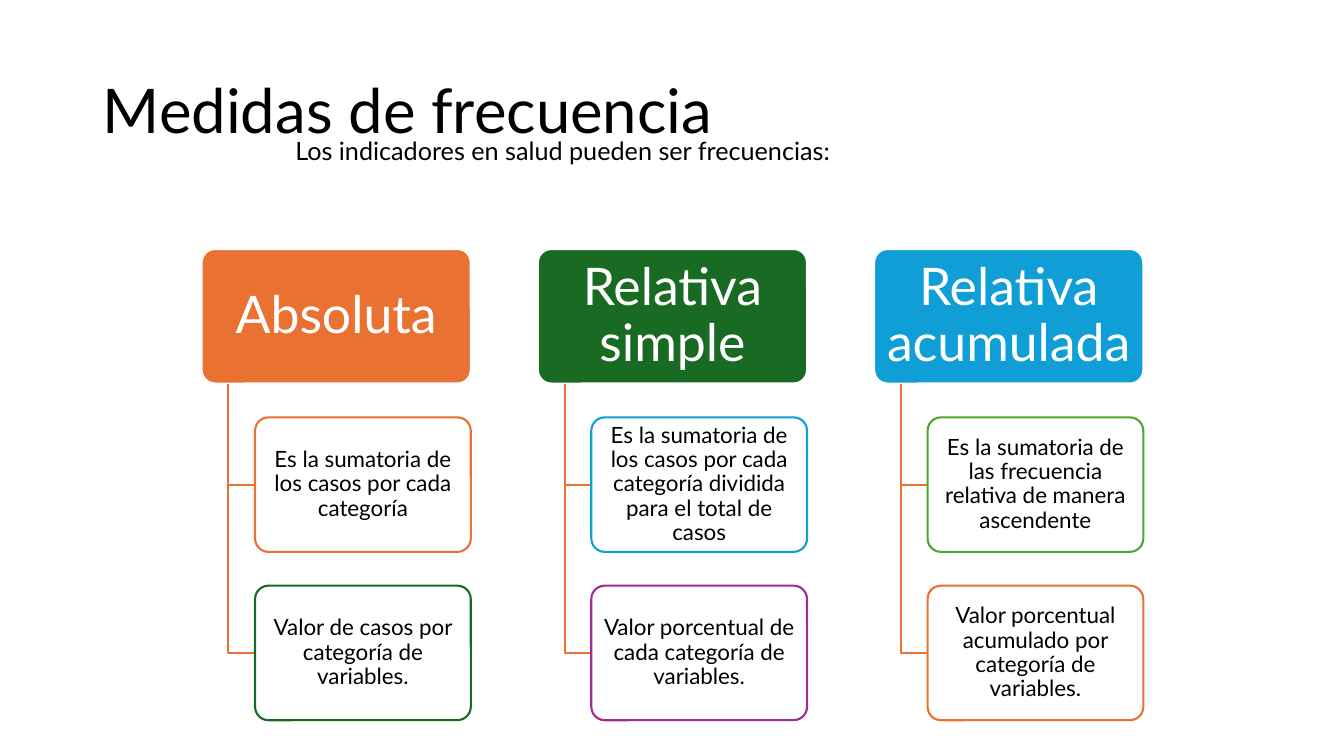
from pptx import Presentation
from pptx.dml.color import RGBColor
from pptx.enum.shapes import MSO_SHAPE
from pptx.enum.text import MSO_ANCHOR, MSO_AUTO_SIZE, PP_ALIGN
from pptx.util import Inches, Pt

FONT = "Lato"
ORANGE, GREEN, BLUE = "E97132", "196B24", "0F9ED5"
PURPLE, LIME, WHITE, BLACK = "A02B93", "4EA72E", "FFFFFF", "000000"

TITLE = "Medidas de frecuencia"
SUBTITLE = "Los indicadores en salud pueden ser frecuencias:"
# Heading, heading colour, then (text, outline colour) for each branch
FREQUENCIES = [
    ("Absoluta", ORANGE, [
        ("Es la sumatoria de los casos por cada categoría", ORANGE),
        ("Valor de casos por categoría de variables.", GREEN),
    ]),
    ("Relativa simple", GREEN, [
        ("Es la sumatoria de los casos por cada categoría dividida para el total de casos", BLUE),
        ("Valor porcentual de cada categoría de variables.", PURPLE),
    ]),
    ("Relativa acumulada", BLUE, [
        ("Es la sumatoria de las frecuencia relativa de manera ascendente", LIME),
        ("Valor porcentual acumulado por categoría de variables.", ORANGE),
    ]),
]

LEFT, TOP = 2, 2.47
COLUMN_STEP, ROW_STEP = 3.335, 1.67
HEADING_WIDTH, BRANCH_WIDTH, BOX_HEIGHT = 2.67, 2.14, 1.335
TRUNK_INDENT, BRANCH_INDENT = 0.265, 0.53


def color(value):
    return RGBColor.from_string(value)


def write(shape, text, size, ink, align=PP_ALIGN.LEFT, spacing=1.0):
    shape.text_frame.text = text
    paragraph = shape.text_frame.paragraphs[0]
    paragraph.alignment = align
    paragraph.line_spacing = spacing
    paragraph.font.name = FONT
    paragraph.font.size = Pt(size)
    paragraph.font.color.rgb = color(ink)


def set_line(shape, ink):
    shape.shadow.inherit = False
    shape.line.color.rgb = color(ink)
    shape.line.width = Pt(1.5)


def add_box(slide, left, top, width, text, size, ink, fill, outline, margins):
    box = slide.shapes.add_shape(
        MSO_SHAPE.ROUNDED_RECTANGLE,
        Inches(left), Inches(top), Inches(width), Inches(BOX_HEIGHT))
    box.adjustments[0] = 0.1
    box.fill.solid()
    box.fill.fore_color.rgb = color(fill)
    set_line(box, outline)
    frame = box.text_frame
    frame.word_wrap = True
    frame.vertical_anchor = MSO_ANCHOR.MIDDLE
    frame.margin_left = frame.margin_right = Inches(margins[0])
    frame.margin_top = frame.margin_bottom = Inches(margins[1])
    write(box, text, size, ink, PP_ALIGN.CENTER, 0.9)


def add_elbow(slide, left, top, right, bottom):
    builder = slide.shapes.build_freeform(Inches(left), Inches(top))
    builder.add_line_segments(
        [(Inches(left), Inches(bottom)), (Inches(right), Inches(bottom))], close=False)
    elbow = builder.convert_to_shape()
    elbow.fill.background()
    set_line(elbow, ORANGE)


def main():
    presentation = Presentation()
    presentation.slide_width, presentation.slide_height = Inches(13.33), Inches(7.5)
    slide = presentation.slides.add_slide(presentation.slide_layouts[5])

    title = slide.shapes.title
    title.left, title.top = Inches(0.92), Inches(0.4)
    title.width, title.height = Inches(11.5), Inches(1.45)
    title.text_frame.auto_size = MSO_AUTO_SIZE.NONE
    title.text_frame.vertical_anchor = MSO_ANCHOR.MIDDLE
    write(title, TITLE, 44, BLACK, spacing=0.9)

    for column, (heading, fill, branches) in enumerate(FREQUENCIES):
        left = LEFT + column * COLUMN_STEP
        add_box(slide, left, TOP, HEADING_WIDTH, heading, 37, WHITE, fill, WHITE, (0.07, 0.05))
        for row, (text, outline) in enumerate(branches, start=1):
            top = TOP + row * ROW_STEP
            add_elbow(slide, left + TRUNK_INDENT, TOP + BOX_HEIGHT,
                      left + BRANCH_INDENT, top + BOX_HEIGHT / 2)
            add_box(slide, left + BRANCH_INDENT, top, BRANCH_WIDTH, text, 16, BLACK,
                    WHITE, outline, (0.03, 0.02))

    subtitle = slide.shapes.add_textbox(Inches(2.83), Inches(1.29), Inches(7.51), Inches(0.4))
    subtitle.text_frame.word_wrap = True
    write(subtitle, SUBTITLE, 18, BLACK)

    presentation.save("out.pptx")


if __name__ == "__main__":
    main()
